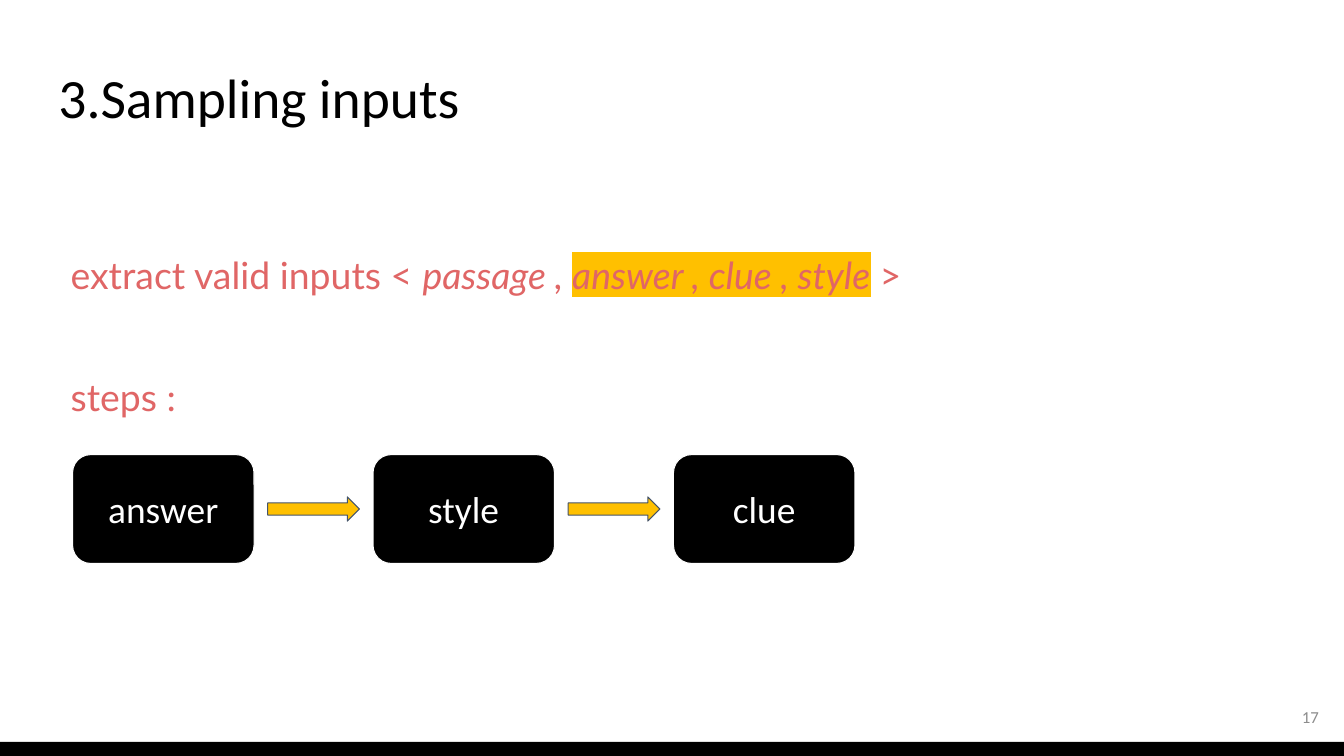
from lxml import etree
from pptx import Presentation
from pptx.dml.color import RGBColor
from pptx.enum.shapes import MSO_SHAPE
from pptx.enum.text import MSO_ANCHOR, MSO_AUTO_SIZE, PP_ALIGN
from pptx.oxml.ns import qn
from pptx.util import Inches, Pt

RECTANGLE, ROUNDED, ARROW = MSO_SHAPE.RECTANGLE, MSO_SHAPE.ROUNDED_RECTANGLE, MSO_SHAPE.RIGHT_ARROW
TOP, MIDDLE = MSO_ANCHOR.TOP, MSO_ANCHOR.MIDDLE
LEFT, CENTER, RIGHT = PP_ALIGN.LEFT, PP_ALIGN.CENTER, PP_ALIGN.RIGHT
BLACK, WHITE, CORAL, AMBER, SLATE, GRAY = "000000", "FFFFFF", "E06666", "FFC000", "44546A", "8C8C8C"

TITLE = "3.Sampling inputs"
INPUTS = [
    ("extract valid inputs < ", False, None),
    ("passage , ", True, None),
    ("answer , clue , style", True, AMBER),
    (" ", True, None),
    (">", False, None),
]
STEPS_LABEL = [("steps :", False, None)]
STEPS = ["answer", "style", "clue"]
PAGE = "17"

WIDTH, HEIGHT = 13.33, 7.5
FOOTER_HEIGHT = 0.14
STEP_LEFT, STEP_TOP, STEP_PITCH = 0.72, 4.51, 2.98
STEP_WIDTH, STEP_HEIGHT = 1.8, 1.08
ARROW_WIDTH, ARROW_HEIGHT = 0.91, 0.24


def color(value):
    return RGBColor.from_string(value)


def box(left, top, width, height):
    return Inches(left), Inches(top), Inches(width), Inches(height)


def write(shape, runs, size, font, ink, align=LEFT, anchor=TOP, inset=0.13):
    frame = shape.text_frame
    frame.word_wrap = True
    frame.vertical_anchor = anchor
    frame.margin_left = frame.margin_right = Inches(inset)
    frame.margin_top = frame.margin_bottom = Inches(inset)
    paragraph = frame.paragraphs[0]
    paragraph.alignment = align
    for text, italic, highlight in runs:
        run = paragraph.add_run()
        run.text = text
        run.font.size, run.font.name, run.font.italic = Pt(size), font, italic
        run.font.color.rgb = color(ink)
        if highlight:
            mark = etree.Element(qn("a:highlight"))
            etree.SubElement(mark, qn("a:srgbClr"), val=highlight)
            run.font._element.find(qn("a:solidFill")).addnext(mark)
    return paragraph


def add_block(slide, kind, place, fill, line=None):
    shape = slide.shapes.add_shape(kind, *box(*place))
    shape.shadow.inherit = False
    shape.fill.solid()
    shape.fill.fore_color.rgb = color(fill)
    if line:
        shape.line.color.rgb = color(line)
        shape.line.width = Pt(0.75)
    else:
        shape.line.fill.background()
    return shape


def main():
    presentation = Presentation()
    presentation.slide_width, presentation.slide_height = Inches(WIDTH), Inches(HEIGHT)
    slide = presentation.slides.add_slide(presentation.slide_layouts[5])

    add_block(slide, RECTANGLE, (0, HEIGHT - FOOTER_HEIGHT, WIDTH, FOOTER_HEIGHT), BLACK)

    title = slide.shapes.title
    title.left, title.top, title.width, title.height = box(0.45, 0.57, 12.42, 0.91)
    write(title, [(TITLE, False, None)], 39.6, "Calibri", BLACK).line_spacing = 0.9
    title.text_frame.auto_size = MSO_AUTO_SIZE.NONE

    for runs, top, width in ((INPUTS, 2.37, 10.17), (STEPS_LABEL, 3.58, 4.75)):
        label = slide.shapes.add_textbox(*box(0.57, top, width, 0.72))
        write(label, runs, 26.7, "Lato", CORAL)
        label.text_frame.auto_size = MSO_AUTO_SIZE.SHAPE_TO_FIT_TEXT

    for index, name in enumerate(STEPS):
        left = STEP_LEFT + index * STEP_PITCH
        step = add_block(slide, ROUNDED, (left, STEP_TOP, STEP_WIDTH, STEP_HEIGHT), BLACK, WHITE)
        write(step, [(name, False, None)], 26.7, "Calibri", WHITE, CENTER, MIDDLE)
        if index < len(STEPS) - 1:
            arrow_left = left + (STEP_WIDTH + STEP_PITCH - ARROW_WIDTH) / 2
            arrow_top = STEP_TOP + (STEP_HEIGHT - ARROW_HEIGHT) / 2
            add_block(slide, ARROW, (arrow_left, arrow_top, ARROW_WIDTH, ARROW_HEIGHT), AMBER, SLATE)

    page = slide.shapes.add_textbox(*box(12.38, 6.83, 0.8, 0.57))
    write(page, [(PAGE, False, None)], 12, "Calibri", GRAY, RIGHT, MIDDLE, 0.1)

    presentation.save("out.pptx")


if __name__ == "__main__":
    main()
